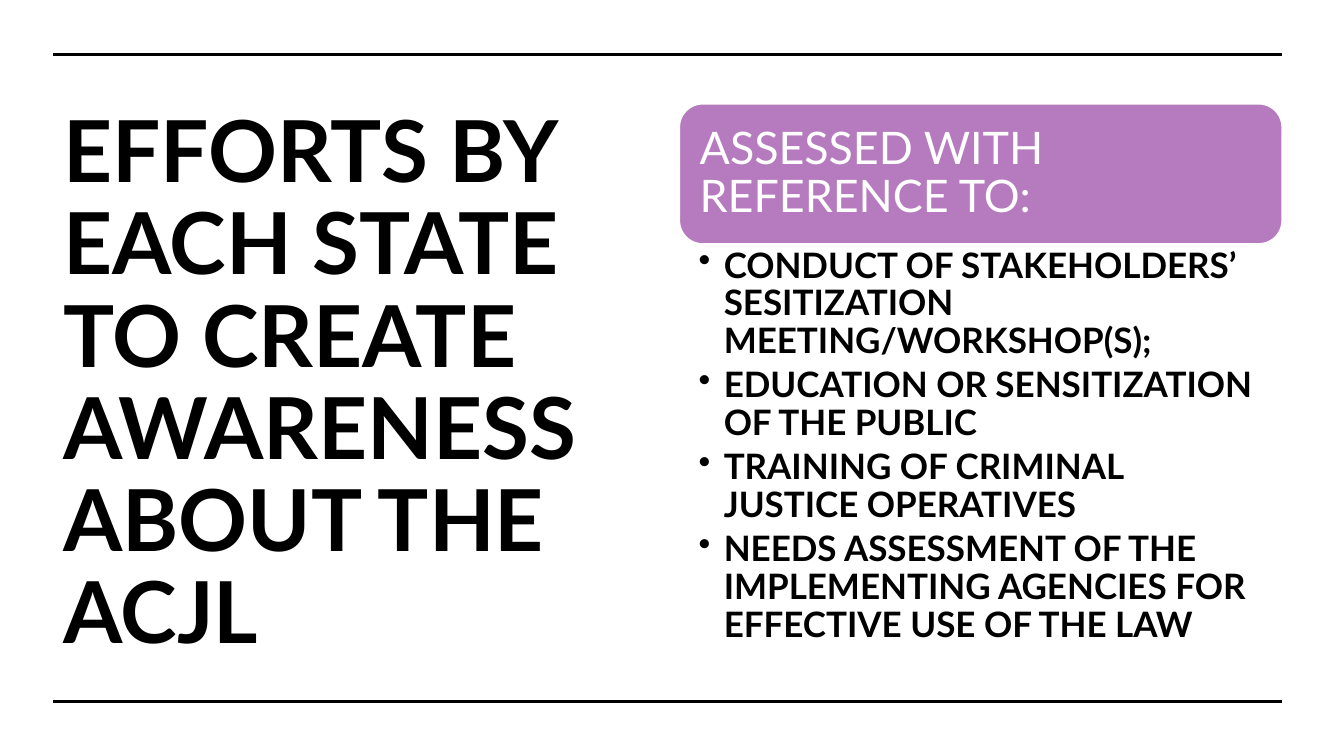
import pptx
import pptx.dml.color
import pptx.enum.shapes
import pptx.enum.text
import pptx.oxml.ns
import pptx.util
from dataclasses import dataclass
from lxml import etree

Pt = pptx.util.Pt
ANCHOR = pptx.enum.text.MSO_ANCHOR


@dataclass(frozen=True)
class Theme:
    font: str = "Lato"
    ink: str = "000000"
    paper: str = "FFFFFF"
    accent: str = "B57BBE"
    title_size: float = 61
    heading_size: float = 32
    body_size: float = 25
    rule_width: float = 2.25
    line_spacing: float = 0.9


def color(value):
    return pptx.dml.color.RGBColor.from_string(value)


def add_bullet(paragraph, indent):
    properties = paragraph._p.get_or_add_pPr()
    properties.set("marL", str(Pt(indent)))
    properties.set("indent", str(-Pt(indent)))
    bullet = etree.SubElement(properties, pptx.oxml.ns.qn("a:buChar"))
    bullet.set("char", "•")


def write_text(frame, text, *, theme, size, ink, bold=False, insets=(7.2, 3.6, 7.2, 3.6),
               anchor=ANCHOR.MIDDLE, space_after=0, bullet_indent=None):
    """Write each line of text as one paragraph."""
    frame.word_wrap = True
    frame.vertical_anchor = anchor
    (frame.margin_left, frame.margin_top,
     frame.margin_right, frame.margin_bottom) = map(Pt, insets)
    for index, line in enumerate(text.split("\n")):
        paragraph = frame.add_paragraph() if index else frame.paragraphs[0]
        paragraph.alignment = pptx.enum.text.PP_ALIGN.LEFT
        paragraph.line_spacing = theme.line_spacing
        paragraph.space_after = Pt(space_after)
        if bullet_indent:
            add_bullet(paragraph, bullet_indent)
        run = paragraph.add_run()
        run.text = line
        run.font.name = theme.font
        run.font.size = Pt(size)
        run.font.bold = bold
        run.font.color.rgb = color(ink)


class SlideBuilder:
    def __init__(self, slide, theme):
        self.slide = slide
        self.theme = theme

    def text_box(self, box, text, **text_format):
        shape = self.slide.shapes.add_textbox(*map(Pt, box))
        write_text(shape.text_frame, text, theme=self.theme, **text_format)

    def rounded_card(self, box, text, **text_format):
        shape = self.slide.shapes.add_shape(
            pptx.enum.shapes.MSO_SHAPE.ROUNDED_RECTANGLE, *map(Pt, box))
        shape.shadow.inherit = False
        shape.fill.solid()
        shape.fill.fore_color.rgb = color(self.theme.accent)
        shape.line.color.rgb = color(self.theme.paper)
        shape.line.width = Pt(1)
        write_text(shape.text_frame, text, theme=self.theme, **text_format)

    def horizontal_rule(self, left, right, top):
        connector = self.slide.shapes.add_connector(
            pptx.enum.shapes.MSO_CONNECTOR.STRAIGHT, Pt(left), Pt(top), Pt(right), Pt(top))
        connector.line.color.rgb = color(self.theme.ink)
        connector.line.width = Pt(self.theme.rule_width)
        etree.SubElement(connector._element.spPr, pptx.oxml.ns.qn("a:effectLst"))


def main():
    theme = Theme()
    presentation = pptx.Presentation()
    presentation.slide_width = Pt(960)
    presentation.slide_height = Pt(540)
    builder = SlideBuilder(
        presentation.slides.add_slide(presentation.slide_layouts[6]), theme)

    left, right = 38.2, 915.8
    column_left, column_width = 485.3, 430.5
    card_top, card_height = 74.2, 100

    # Title on the left
    builder.text_box((left, 68.4, 442, 414),
                     "EFFORTS BY EACH STATE TO CREATE AWARENESS ABOUT THE ACJL",
                     size=theme.title_size, ink=theme.ink, bold=True)

    # Rules above and below the content
    for top in (38.9, 501.1):
        builder.horizontal_rule(left, right, top)

    # Heading card
    builder.rounded_card((column_left, card_top, column_width, card_height),
                         "ASSESSED WITH REFERENCE TO:",
                         size=theme.heading_size, ink=theme.paper, insets=(9.6,) * 4)

    # Assessment criteria
    criteria = (
        "CONDUCT OF STAKEHOLDERS’ SESITIZATION MEETING/WORKSHOP(S);",
        "EDUCATION OR SENSITIZATION OF THE PUBLIC",
        "TRAINING OF CRIMINAL JUSTICE OPERATIVES",
        "NEEDS ASSESSMENT OF THE IMPLEMENTING AGENCIES FOR EFFECTIVE USE OF THE LAW",
    )
    builder.text_box((column_left, card_top + card_height, column_width, 302.4),
                     "\n".join(criteria), size=theme.body_size, ink=theme.ink, bold=True,
                     insets=(13.7, 2.9, 18, 2.9), anchor=ANCHOR.TOP,
                     space_after=4.5, bullet_indent=18)

    presentation.save("out.pptx")


if __name__ == "__main__":
    main()
